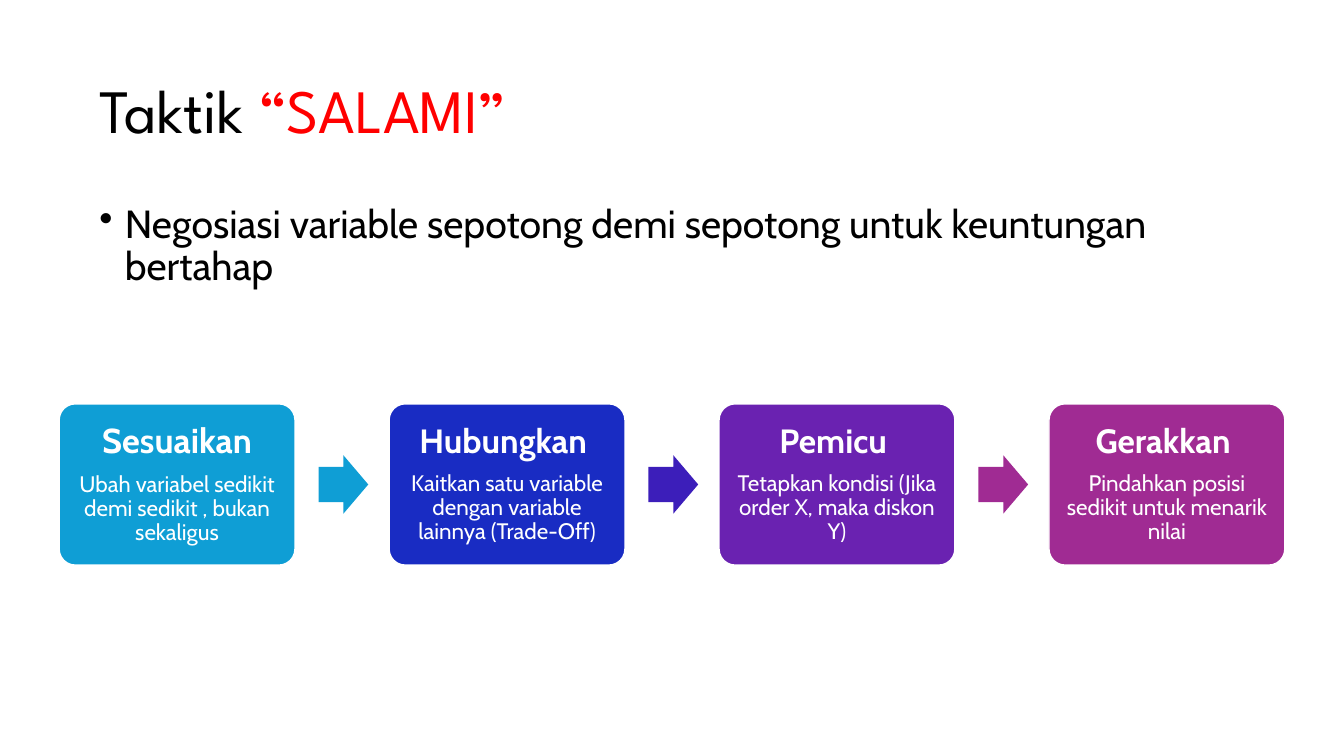
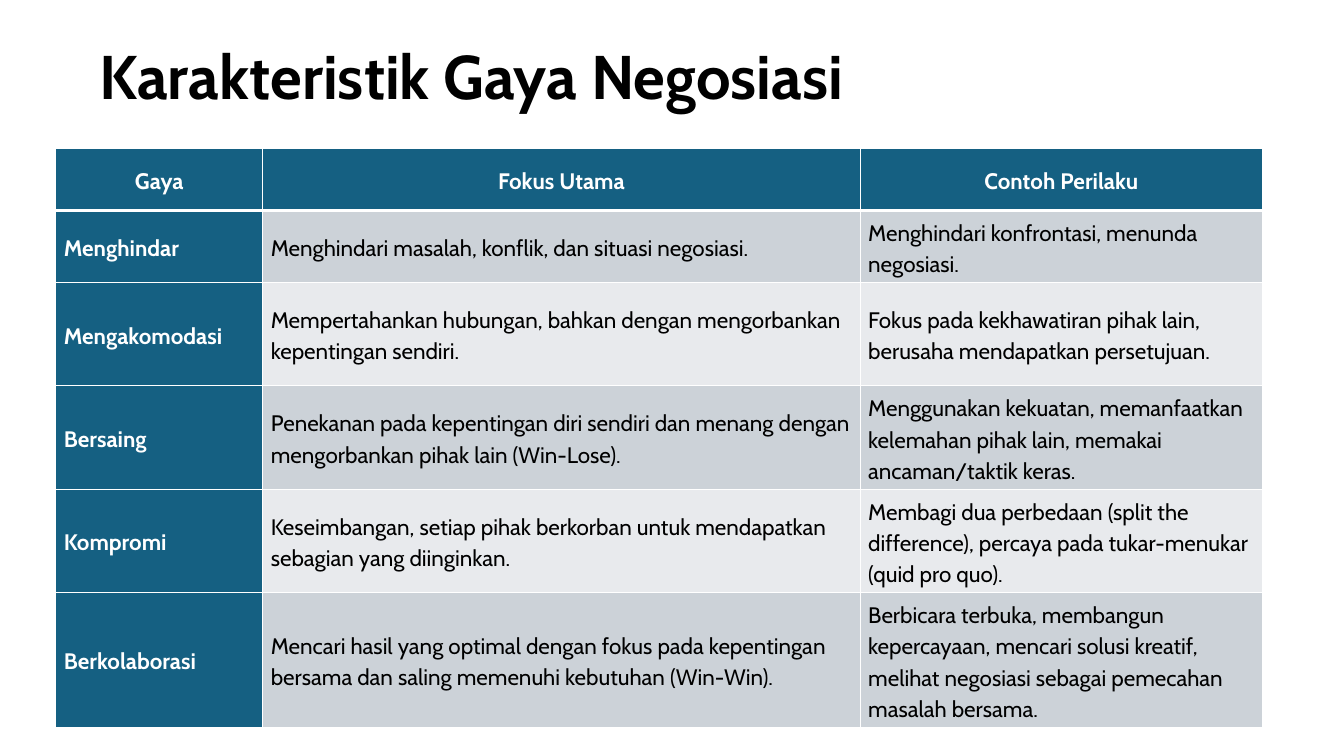
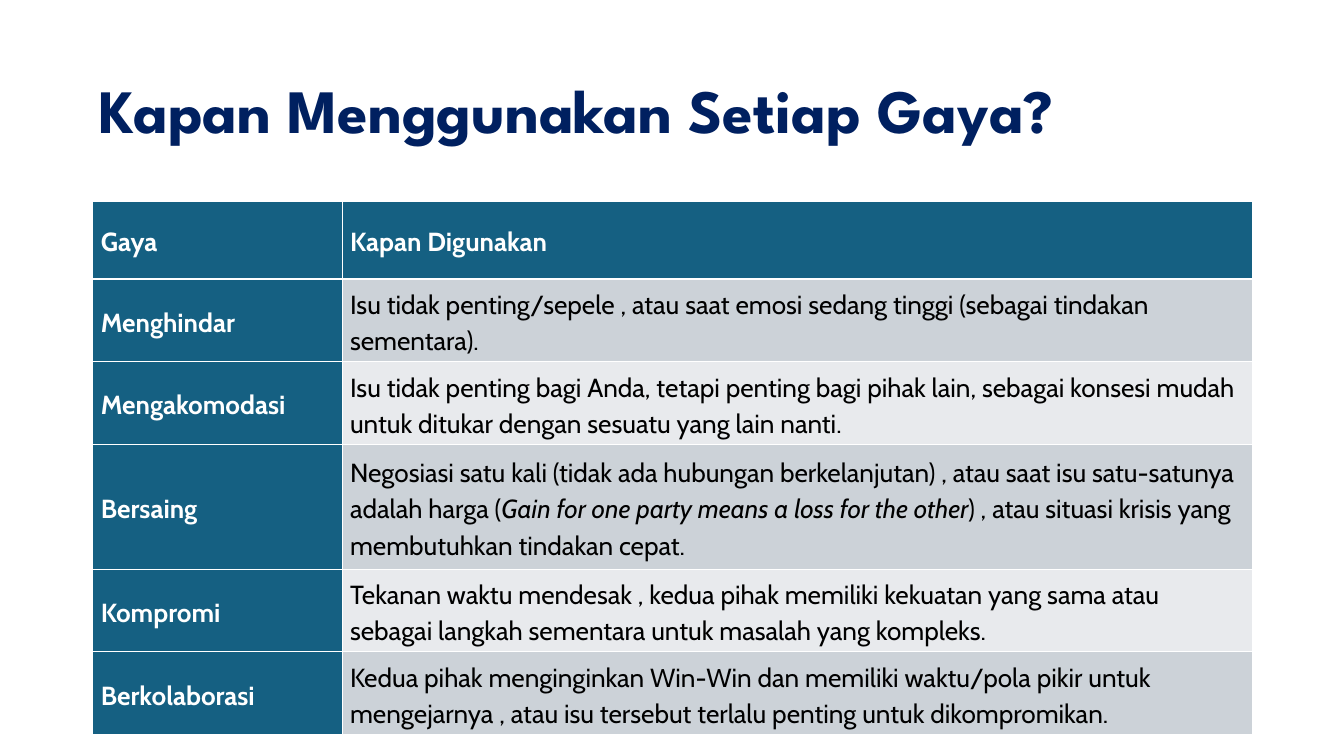
"""Build three slides on negotiation tactics and styles."""
import pptx
import pptx.dml.color
import pptx.enum.shapes
import pptx.enum.text
import pptx.oxml
import pptx.oxml.ns
import pptx.util
from pptx.util import Inches

Pt = pptx.util.Pt
KIND = pptx.enum.shapes.MSO_SHAPE
ALIGN = pptx.enum.text.PP_ALIGN
MIDDLE = pptx.enum.text.MSO_ANCHOR.MIDDLE

COLORS = {
    "black": "000000", "white": "FFFFFF", "red": "FF0000", "navy": "002060",
    "teal": "156082", "odd": "CCD2D8", "even": "E8EAED",
    "sky": "0F9ED5", "blue": "192CC3", "indigo": "3C1EBA",
    "violet": "6A22B1", "plum": "A02B93",
}
BODY, HEAD = "Cabin", "League Spartan"
TITLE = {"size": Pt(66), "name": HEAD, "bold": False, "color": "black"}
PLAIN = {"name": BODY, "bold": False, "color": "black"}
STRONG = {"name": BODY, "bold": True, "color": "white"}

TACTIC = [("Taktik ", {}), ("“SALAMI”", {"color": "red"})]
POINT = "Negosiasi variable sepotong demi sepotong untuk keuntungan bertahap"
STEPS = [
    ("Sesuaikan", 37, "Ubah variabel sedikit demi sedikit , bukan sekaligus", "sky"),
    ("Hubungkan ", 36, "Kaitkan satu variable dengan variable lainnya (Trade-Off)", "blue"),
    ("Pemicu ", 36, "Tetapkan kondisi (Jika order X, maka diskon Y)", "violet"),
    ("Gerakkan ", 36, "Pindahkan posisi sedikit untuk menarik nilai", "plum"),
]
ARROWS = ["sky", "indigo", "plum"]

STYLES = {
    "at": (0.83, 2.21), "size": 24, "head": ALIGN.CENTER,
    "cols": [3.08, 8.89, 5.99], "rows": [0.92, 0.96] + [1.53] * 4,
    "cells": [
        ("Gaya", "Fokus Utama", "Contoh Perilaku"),
        ("Menghindar",
         "Menghindari masalah, konflik, dan situasi negosiasi.",
         "Menghindari konfrontasi, menunda negosiasi."),
        ("Mengakomodasi",
         "Mempertahankan hubungan, bahkan dengan mengorbankan kepentingan sendiri.",
         "Fokus pada kekhawatiran pihak lain, berusaha mendapatkan persetujuan."),
        ("Bersaing",
         "Penekanan pada kepentingan diri sendiri dan menang dengan mengorbankan pihak lain (Win-Lose).",
         "Menggunakan kekuatan, memanfaatkan kelemahan pihak lain, memakai ancaman/taktik keras."),
        ("Kompromi",
         "Keseimbangan, setiap pihak berkorban untuk mendapatkan sebagian yang diinginkan.",
         "Membagi dua perbedaan (split the difference), percaya pada tukar-menukar (quid pro quo)."),
        ("Berkolaborasi",
         "Mencari hasil yang optimal dengan fokus pada kepentingan bersama dan saling memenuhi kebutuhan (Win-Win).",
         "Berbicara terbuka, membangun kepercayaan, mencari solusi kreatif, "
         "melihat negosiasi sebagai pemecahan masalah bersama."),
    ],
}
USES = {
    "at": (1.38, 2.99), "size": 28, "head": ALIGN.LEFT,
    "cols": [3.71, 13.54], "rows": [1.16] * 3 + [1.85] + [1.16] * 2,
    "cells": [
        ("Gaya", "Kapan Digunakan"),
        ("Menghindar",
         "Isu tidak penting/sepele , atau saat emosi sedang tinggi (sebagai tindakan sementara)."),
        ("Mengakomodasi",
         "Isu tidak penting bagi Anda, tetapi penting bagi pihak lain, "
         "sebagai konsesi mudah untuk ditukar dengan sesuatu yang lain nanti."),
        ("Bersaing", [
            ("Negosiasi satu kali (tidak ada hubungan berkelanjutan) , "
             "atau saat isu satu-satunya adalah harga (", {}),
            ("Gain for one party means a loss for the other", {"italic": True}),
            (") , atau situasi krisis yang membutuhkan tindakan cepat.", {})]),
        ("Kompromi",
         "Tekanan waktu mendesak , kedua pihak memiliki kekuatan yang sama "
         "atau sebagai langkah sementara untuk masalah yang kompleks."),
        ("Berkolaborasi",
         "Kedua pihak menginginkan Win-Win dan memiliki waktu/pola pikir untuk "
         "mengejarnya , atau isu tersebut terlalu penting untuk dikompromikan."),
    ],
}


def paint(target, name):
    target.solid()
    target.fore_color.rgb = pptx.dml.color.RGBColor.from_string(COLORS[name])


def assign(target, values):
    for key, value in values.items():
        setattr(target, key, value)


def write(para, text, look, **layout):
    assign(para, {"line_spacing": 0.9, **layout})
    for words, extra in [(text, {})] if isinstance(text, str) else text:
        run = para.add_run()
        run.text = words
        values = {**look, **extra}
        paint(run.font.fill, values.pop("color"))
        assign(run.font, values)


def add_box(slide, top, height):
    box = slide.shapes.add_textbox(Inches(1.38), Inches(top), Inches(17.25), Inches(height))
    box.text_frame.word_wrap = True
    return box.text_frame


def add_title(slide, text, foot=0.05, **extra):
    frame = add_box(slide, 0.6, 2.17)
    assign(frame, {"vertical_anchor": MIDDLE, "margin_bottom": Inches(foot)})
    write(frame.paragraphs[0], text, {**TITLE, **extra})


def add_point(slide, text):
    para = add_box(slide, 2.99, 7.14).paragraphs[0]
    props = para._p.get_or_add_pPr()
    props.set("marL", str(Inches(0.38)))
    props.set("indent", str(-Inches(0.38)))
    mark = pptx.oxml.parse_xml(f'<a:buChar {pptx.oxml.ns.nsdecls("a")} char="•"/>')
    props.append(mark)
    write(para, text, {**PLAIN, "size": Pt(42)})


def add_shape(group, kind, place, color, adjust):
    shape = group.shapes.add_shape(kind, *map(Inches, place))
    shape.shadow.inherit = False
    paint(shape.fill, color)
    shape.line.fill.background()
    for i, value in enumerate(adjust):
        shape.adjustments[i] = value
    return shape


def add_flow(slide):
    group = slide.shapes.add_group_shape()
    left, top, width, height, pitch = 0.88, 6.01, 3.51, 2.4, 4.91
    for i, (name, size, text, color) in enumerate(STEPS):
        x = left + i * pitch
        card = add_shape(group, KIND.ROUNDED_RECTANGLE, (x, top, width, height), color, [0.1])
        paint(card.line.fill, "white")
        card.line.width = Pt(1.5)
        frame = card.text_frame
        assign(frame, {"word_wrap": True, "vertical_anchor": MIDDLE})
        assign(frame, {f"margin_{s}": Inches(0.15) for s in ("left", "top", "right", "bottom")})
        write(frame.paragraphs[0], name, {**STRONG, "size": Pt(size)},
              alignment=ALIGN.CENTER, space_after=Pt(size * 0.35))
        write(frame.add_paragraph(), text, {**STRONG, "bold": False, "size": Pt(24)},
              alignment=ALIGN.CENTER)
        if i < len(ARROWS):
            place = (x + width + 0.35, top + (height - 0.87) / 2, 0.74, 0.87)
            add_shape(group, KIND.RIGHT_ARROW, place, ARROWS[i], [0.6, 0.5])


def add_rules(cell, row):
    widths = {"L": 1, "R": 1, "T": 3 if row == 1 else 1, "B": 3 if row == 0 else 1}
    for i, (side, width) in enumerate(widths.items()):
        rule = pptx.oxml.parse_xml(
            f'<a:ln{side} {pptx.oxml.ns.nsdecls("a")} w="{Pt(width)}"><a:solidFill>'
            f'<a:srgbClr val="{COLORS["white"]}"/></a:solidFill></a:ln{side}>')
        cell._tc.get_or_add_tcPr().insert(i, rule)


def add_grid(slide, data):
    cols, rows = data["cols"], data["rows"]
    place = (*data["at"], sum(cols), sum(rows))
    table = slide.shapes.add_table(len(rows), len(cols), *map(Inches, place)).table
    table.horz_banding = False
    for col, width in zip(table.columns, cols):
        col.width = Inches(width)
    for r, texts in enumerate(data["cells"]):
        table.rows[r].height = Inches(rows[r])
        for c, text in enumerate(texts):
            cell = table.cell(r, c)
            dark = r == 0 or c == 0
            paint(cell.fill, "teal" if dark else "odd" if r % 2 else "even")
            add_rules(cell, r)
            assign(cell, {
                "vertical_anchor": MIDDLE,
                "margin_left": Inches(0.12), "margin_right": Inches(0.12),
                "margin_top": Inches(0.08), "margin_bottom": Inches(0.08)})
            look = {**(STRONG if dark else PLAIN), "size": Pt(data["size"])}
            write(cell.text_frame.paragraphs[0], text, look, line_spacing=1.15,
                  space_after=Pt(8), alignment=ALIGN.LEFT if r else data["head"])


def main():
    deck = pptx.Presentation()
    deck.slide_width, deck.slide_height = Inches(20), Inches(11.25)
    salami, styles, uses = [deck.slides.add_slide(deck.slide_layouts[6]) for _ in range(3)]

    add_title(salami, TACTIC)
    add_point(salami, POINT)
    add_flow(salami)

    add_title(styles, "Karakteristik Gaya Negosiasi", foot=1.05, name=BODY, bold=True)
    add_grid(styles, STYLES)

    add_title(uses, "Kapan Menggunakan Setiap Gaya?", bold=True, color="navy")
    add_grid(uses, USES)
    deck.save("out.pptx")


if __name__ == "__main__":
    main()
